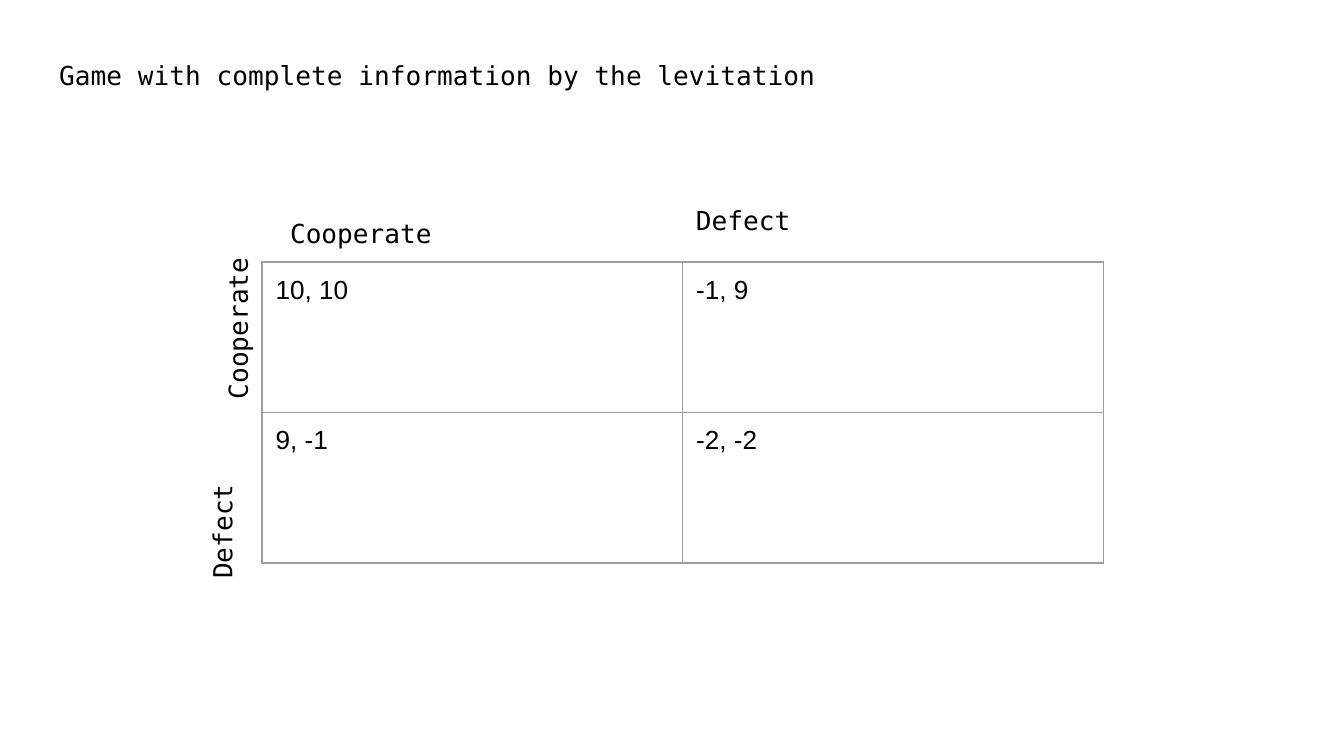
from dataclasses import dataclass

from lxml.etree import SubElement
from pptx import Presentation
from pptx.dml.color import RGBColor
from pptx.enum.text import MSO_ANCHOR, MSO_AUTO_SIZE, PP_ALIGN
from pptx.oxml.ns import qn
from pptx.util import Inches, Pt


@dataclass(frozen=True)
class Theme:
    ink: str = "000000"
    paper: str = "FFFFFF"
    rule: str = "9E9E9E"
    mono: str = "DejaVu Sans Mono"
    sans: str = "Arial"
    size: int = 14
    rule_width: float = 0.75
    inset: float = 0.1


THEME = Theme()

TITLE = "Game with complete information by the levitation"
PAYOFFS = [
    ["10, 10", "-1, 9"],
    ["9, -1", "-2, -2"],
]

SLIDE_W = 10
SLIDE_H = SLIDE_W * 9 / 16
MARGIN = 0.34
GRID_LEFT, GRID_TOP = 1.95, 1.95
COLUMN, ROW = 3.13, 1.12
LABEL_H = 0.43

COLUMN_LABELS = [
    ("Cooperate", GRID_LEFT + 0.11, GRID_TOP - LABEL_H, 2.94),
    ("Defect", GRID_LEFT + COLUMN, GRID_TOP - LABEL_H - 0.1, 2.94),
]
ROW_LABELS = [
    ("Cooperate", 1.05, GRID_TOP + 0.19, 1.43),
    ("Defect", 0.98, GRID_TOP + ROW + 0.45, 1.34),
]


def write(frame, text, font_name):
    frame.text = text
    paragraph = frame.paragraphs[0]
    paragraph.alignment = PP_ALIGN.LEFT
    font = paragraph.runs[0].font
    font.name = font_name
    font.size = Pt(THEME.size)
    font.color.rgb = RGBColor.from_string(THEME.ink)


def set_insets(holder):
    inset = Inches(THEME.inset)
    holder.margin_left = holder.margin_right = inset
    holder.margin_top = holder.margin_bottom = inset
    holder.vertical_anchor = MSO_ANCHOR.TOP


def add_title(slide):
    title = slide.shapes.title
    title.left, title.top = Inches(MARGIN), Inches(MARGIN)
    title.width, title.height = Inches(SLIDE_W - 2 * MARGIN), Inches(0.82)
    set_insets(title.text_frame)
    title.text_frame.auto_size = MSO_AUTO_SIZE.NONE
    write(title.text_frame, TITLE, THEME.mono)


def add_label(slide, text, left, top, width, rotation=0):
    label = slide.shapes.add_textbox(
        Inches(left), Inches(top), Inches(width), Inches(LABEL_H))
    label.rotation = rotation
    frame = label.text_frame
    frame.word_wrap = True
    frame.auto_size = MSO_AUTO_SIZE.SHAPE_TO_FIT_TEXT
    set_insets(frame)
    write(frame, text, THEME.mono)


def add_borders(cell):
    properties = cell._tc.get_or_add_tcPr()
    for position, side in enumerate(("lnL", "lnR", "lnT", "lnB")):
        line = SubElement(properties, qn(f"a:{side}"), w=str(Pt(THEME.rule_width)))
        fill = SubElement(line, qn("a:solidFill"))
        SubElement(fill, qn("a:srgbClr"), val=THEME.rule)
        properties.insert(position, line)


def add_payoffs(slide):
    rows, columns = len(PAYOFFS), len(PAYOFFS[0])
    matrix = slide.shapes.add_table(
        rows, columns, Inches(GRID_LEFT), Inches(GRID_TOP),
        Inches(columns * COLUMN), Inches(rows * ROW)).table
    matrix.first_row = matrix.horz_banding = False
    for column in matrix.columns:
        column.width = Inches(COLUMN)
    for row, payoffs in zip(matrix.rows, PAYOFFS):
        row.height = Inches(ROW)
        for cell, payoff in zip(row.cells, payoffs):
            set_insets(cell)
            cell.fill.background()
            add_borders(cell)
            write(cell.text_frame, payoff, THEME.sans)


def main():
    deck = Presentation()
    deck.slide_width, deck.slide_height = Inches(SLIDE_W), Inches(SLIDE_H)
    slide = deck.slides.add_slide(deck.slide_layouts.get_by_name("Title Only"))
    slide.background.fill.solid()
    slide.background.fill.fore_color.rgb = RGBColor.from_string(THEME.paper)
    add_title(slide)
    add_payoffs(slide)
    for label in reversed(COLUMN_LABELS):
        add_label(slide, *label)
    for label in ROW_LABELS:
        add_label(slide, *label, rotation=270)
    deck.save("out.pptx")


if __name__ == "__main__":
    main()
